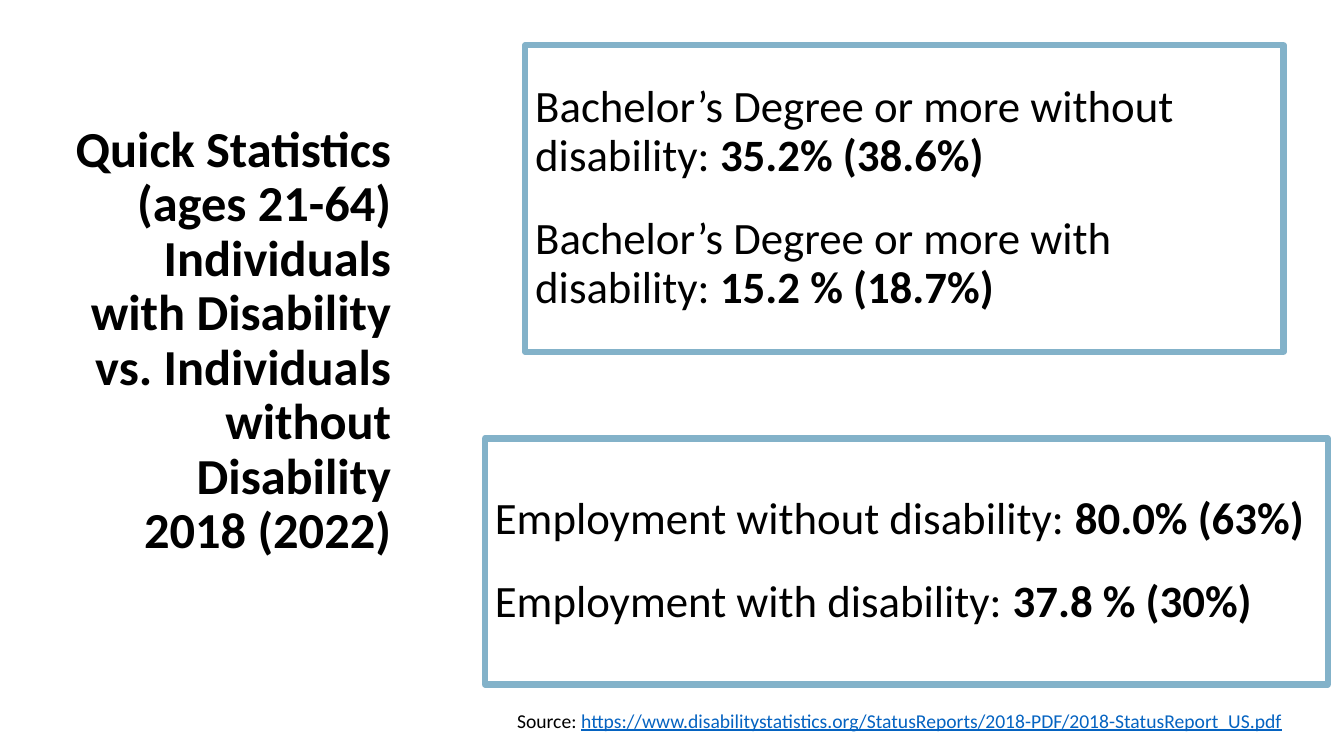
from dataclasses import dataclass

from pptx import Presentation
from pptx.dml.color import RGBColor
from pptx.enum.shapes import MSO_SHAPE
from pptx.enum.text import MSO_ANCHOR, PP_ALIGN
from pptx.shapes.autoshape import Shape
from pptx.slide import Slide
from pptx.text.text import _Paragraph, _Run
from pptx.util import Inches, Pt

RECT = MSO_SHAPE.RECTANGLE
TOP, MIDDLE, BOTTOM = MSO_ANCHOR.TOP, MSO_ANCHOR.MIDDLE, MSO_ANCHOR.BOTTOM
LEFT, RIGHT = PP_ALIGN.LEFT, PP_ALIGN.RIGHT


@dataclass(frozen=True)
class Theme:
    """Colours, font and type sizes of the slide."""
    font: str = "Calibri"
    ink: RGBColor = RGBColor(0x00, 0x00, 0x00)
    frame: RGBColor = RGBColor(0x83, 0xB2, 0xC9)
    link: RGBColor = RGBColor(0x05, 0x63, 0xC1)
    title: int = 36
    body: int = 32
    note: int = 14
    border: float = 4.5
    tight: float = 0.9
    after: int = 6
    gap: int = 19


@dataclass(frozen=True)
class Area:
    """Place and size in inches."""
    left: float
    top: float
    width: float
    height: float

    def bounds(self) -> tuple[int, int, int, int]:
        """Return the four lengths."""
        return (Inches(self.left), Inches(self.top),
                Inches(self.width), Inches(self.height))


@dataclass(frozen=True)
class Fact:
    """A label and its bold figure."""
    label: str
    value: str


@dataclass(frozen=True)
class Panel:
    """A framed box of facts."""
    area: Area
    facts: tuple[Fact, ...]


THEME = Theme()
HEADING = ("Quick Statistics\v(ages 21-64) Individuals with Disability "
           "vs. Individuals without Disability\v2018 (2022)")
SOURCE = "https://www.disabilitystatistics.org/StatusReports/2018-PDF/2018-StatusReport_US.pdf"
PANELS = (
    Panel(Area(5.21, 0.45, 7.52, 3.04), (
        Fact("Bachelor’s Degree or more without disability: ", "35.2% (38.6%)"),
        Fact("Bachelor’s Degree or more with disability: ", "15.2 % (18.7%)"),
    )),
    Panel(Area(4.81, 4.35, 8.36, 2.44), (
        Fact("Employment without disability: ", "80.0% (63%)"),
        Fact("Employment with disability: ", "37.8 % (30%)"),
    )),
)


def style(run: _Run, size: int, bold: bool = False, color: RGBColor = THEME.ink) -> None:
    """Format one run."""
    run.font.name = THEME.font
    run.font.size = Pt(size)
    run.font.bold = bold
    run.font.color.rgb = color


def setup(shape: Shape, anchor: MSO_ANCHOR) -> None:
    """Wrap and anchor the text of a shape."""
    shape.text_frame.word_wrap = True
    shape.text_frame.vertical_anchor = anchor


def add_title(slide: Slide, area: Area) -> None:
    """Draw the heading."""
    box = slide.shapes.add_textbox(*area.bounds())
    setup(box, BOTTOM)
    box.text_frame.text = HEADING
    para = box.text_frame.paragraphs[0]
    para.alignment = RIGHT
    para.line_spacing = THEME.tight
    for run in para.runs:
        style(run, THEME.title, bold=True)


def add_fact(para: _Paragraph, fact: Fact) -> None:
    """Write one fact into a paragraph."""
    para.text = fact.label
    para.add_run().text = fact.value
    para.alignment = LEFT
    para.line_spacing = THEME.tight
    para.space_after = Pt(THEME.after)
    label, value = para.runs
    style(label, THEME.body)
    style(value, THEME.body, bold=True)


def add_panel(slide: Slide, panel: Panel) -> None:
    """Draw a framed box with its facts."""
    box = slide.shapes.add_shape(RECT, *panel.area.bounds())
    box.shadow.inherit = False
    box.fill.background()
    box.line.color.rgb = THEME.frame
    box.line.width = Pt(THEME.border)
    setup(box, MIDDLE)
    frame = box.text_frame
    for index, fact in enumerate(panel.facts):
        para = frame.add_paragraph() if index else frame.paragraphs[0]
        para.space_before = Pt(THEME.gap if index else 0)
        add_fact(para, fact)


def add_source(slide: Slide, area: Area) -> None:
    """Draw the source line."""
    box = slide.shapes.add_textbox(*area.bounds())
    setup(box, TOP)
    para = box.text_frame.paragraphs[0]
    para.text = "Source: "
    para.add_run().text = SOURCE
    label, address = para.runs
    style(label, THEME.note)
    style(address, THEME.note, color=THEME.link)
    address.font.underline = True


def main() -> None:
    """Build and save the slide."""
    deck = Presentation()
    deck.slide_width, deck.slide_height = Inches(13.33), Inches(7.5)
    slide = deck.slides.add_slide(deck.slide_layouts[6])
    add_title(slide, Area(0.48, 1.9, 3.5, 3.7))
    for panel in PANELS:
        add_panel(slide, panel)
    add_source(slide, Area(5.03, 6.98, 8.14, 0.34))
    deck.save("out.pptx")


if __name__ == "__main__":
    main()
